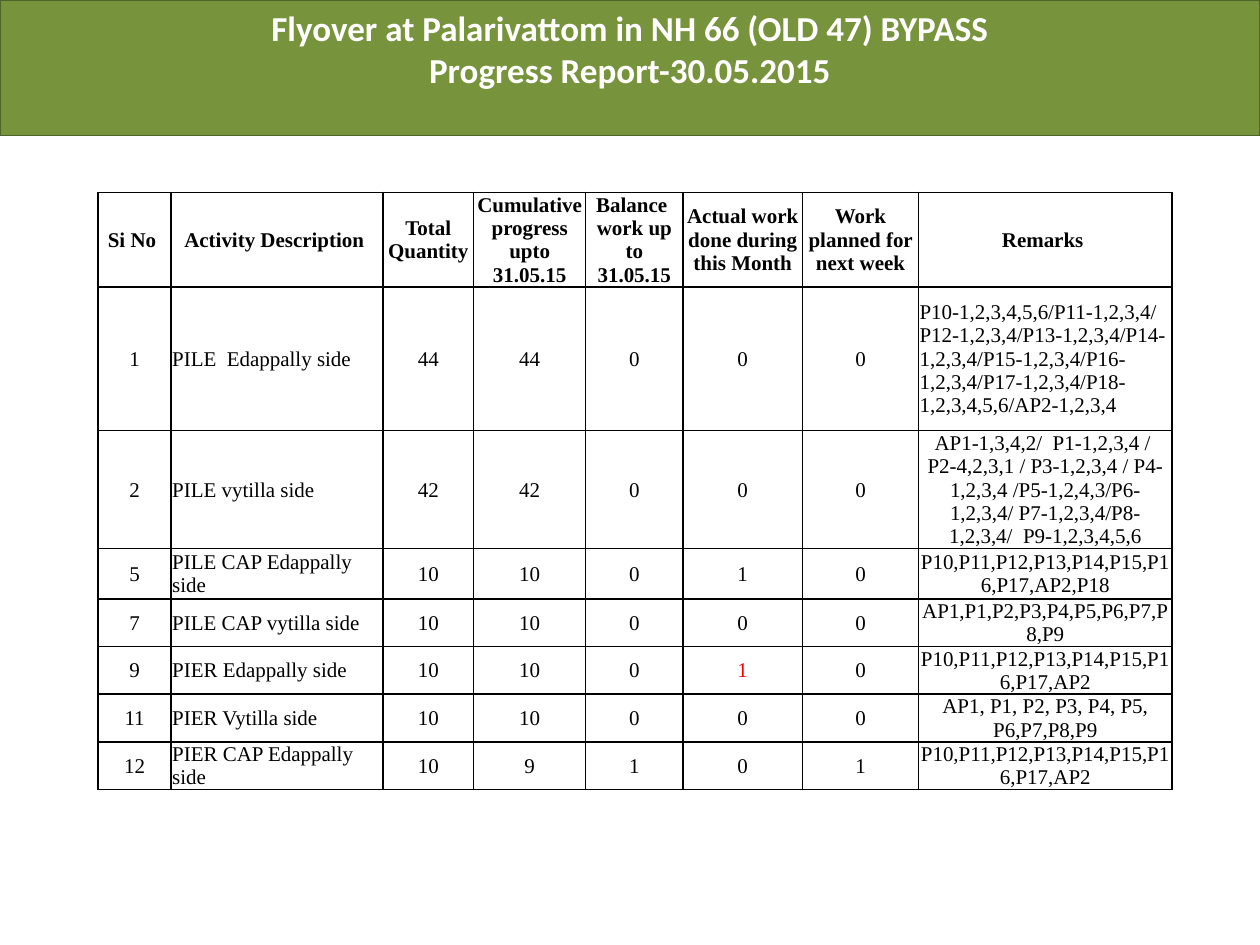
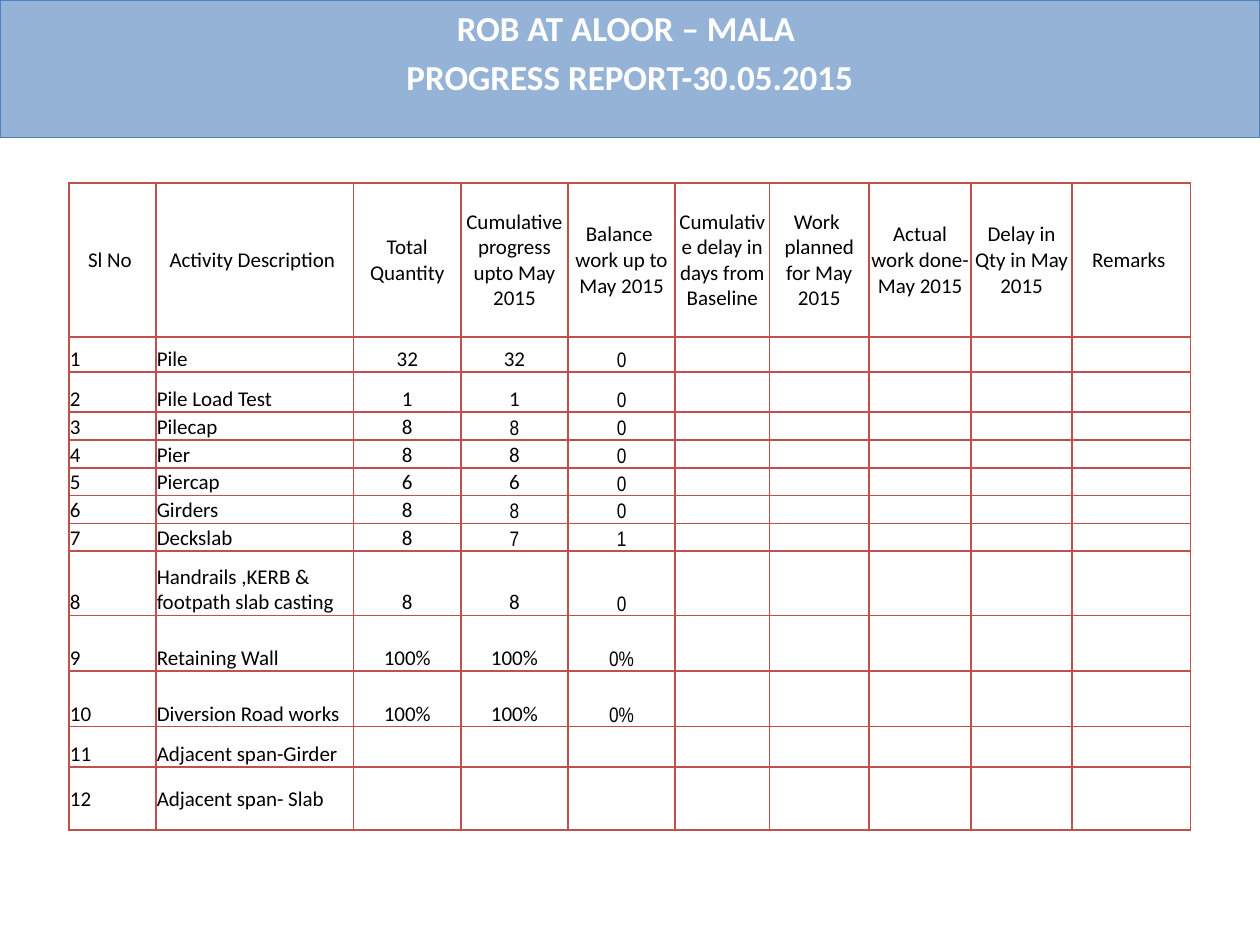
from lxml import etree
from pptx import Presentation
from pptx import util as u
from pptx.dml.color import RGBColor
from pptx.enum import shapes, text
from pptx.oxml.ns import qn

COLORS = {
    "white": "FFFFFF", "black": "000000", "red": "FF0000",
    "green": "77933C", "dark_green": "4F6228",
    "light_blue": "95B3D7", "blue": "4F81BD", "brick": "C0504D",
}
SLIDE_W, SLIDE_H = 25.4, 19.05
CELL_PAD = 0.02
ALIGN = {"left": text.PP_ALIGN.LEFT, "center": text.PP_ALIGN.CENTER}
ANCHOR = {
    "top": text.MSO_ANCHOR.TOP,
    "middle": text.MSO_ANCHOR.MIDDLE,
    "bottom": text.MSO_ANCHOR.BOTTOM,
}

FLYOVER_COLS = [1.47, 4.27, 1.83, 2.26, 1.96, 2.41, 2.34, 5.11]
FLYOVER_HEIGHTS = [1.75, 2.9, 2.26, 1.02, 0.79, 0.81, 0.86, 0.86]
FLYOVER_ROWS = [
    ["Si No ", "Activity Description ", "Total Quantity",
     "Cumulative progress upto 31.05.15", "Balance  work up to 31.05.15",
     "Actual work done during this Month", "Work planned for next week", "Remarks "],
    ["1", "PILE  Edappally side", "44", "44", "0", "0", "0",
     "P10-1,2,3,4,5,6/P11-1,2,3,4/P12-1,2,3,4/P13-1,2,3,4/P14-1,2,3,4/"
     "P15-1,2,3,4/P16-1,2,3,4/P17-1,2,3,4/P18-1,2,3,4,5,6/AP2-1,2,3,4"],
    ["2", "PILE vytilla side", "42", "42", "0", "0", "0",
     "AP1-1,3,4,2/  P1-1,2,3,4 /  P2-4,2,3,1 / P3-1,2,3,4 / P4-1,2,3,4 /"
     "P5-1,2,4,3/P6-1,2,3,4/ P7-1,2,3,4/P8-1,2,3,4/  P9-1,2,3,4,5,6"],
    ["5", "PILE CAP Edappally side", "10", "10", "0", "1", "0",
     "P10,P11,P12,P13,P14,P15,P16,P17,AP2,P18"],
    ["7", "PILE CAP vytilla side", "10", "10", "0", "0", "0",
     "AP1,P1,P2,P3,P4,P5,P6,P7,P8,P9"],
    ["9", "PIER Edappally side", "10", "10", "0", "1", "0",
     "P10,P11,P12,P13,P14,P15,P16,P17,AP2"],
    ["11", "PIER Vytilla side", "10", "10", "0", "0", "0",
     "AP1, P1, P2, P3, P4, P5, P6,P7,P8,P9"],
    ["12", "PIER CAP Edappally side", "10", "9", "1", "0", "1",
     "P10,P11,P12,P13,P14,P15,P16,P17,AP2"],
]

ROB_COLS = [1.75, 3.99, 2.16, 2.16, 2.16, 1.9, 2.01, 2.06, 2.03, 2.39]
ROB_HEIGHTS = [3.1, 0.71, 0.81] + [0.56] * 5 + [1.3, 1.12, 1.12, 0.81, 1.27]
ROB_ROWS = [
    ["Sl No ", "Activity Description ", "Total Quantity",
     "Cumulative progress upto May 2015", "Balance  work up to May 2015",
     "Cumulative delay in days from Baseline", "Work  planned for May 2015",
     "Actual work done- May 2015", "Delay in Qty in May 2015", "Remarks "],
    ["1", "Pile", "32", "32", "0"],
    ["2", "Pile Load Test", "1", "1", "0"],
    ["3", "Pilecap", "8", "8", "0"],
    ["4", "Pier", "8", "8", "0"],
    ["5", "Piercap", "6", "6", "0"],
    ["6", "Girders", "8", "8", "0"],
    ["7", "Deckslab", "8", "7", "1"],
    ["8", "Handrails ,KERB & footpath slab casting", "8", "8", "0"],
    ["9", "Retaining Wall", "100%", "100%", "0%"],
    ["10", "Diversion Road works", "100%", "100%", "0%"],
    ["11", "Adjacent span-Girder"],
    ["12", "Adjacent span- Slab"],
]


def rgb(name):
    return RGBColor.from_string(COLORS[name])


def write(p, content, font="Calibri", size=12, color="black", bold=False,
          align="center", before=0):
    p.alignment = ALIGN[align]
    p.space_before = u.Pt(before)
    if not content:
        etree.SubElement(p._p, qn("a:endParaRPr"), sz=str(size * 100))
        return
    r = p.add_run()
    r.text = content
    r.font.name, r.font.size, r.font.bold = font, u.Pt(size), bold
    r.font.color.rgb = rgb(color)


def title_band(s, box, lines, fill, line, gap):
    sp = s.shapes.add_shape(shapes.MSO_SHAPE.RECTANGLE, *map(u.Cm, box))
    sp.shadow.inherit = False
    sp.fill.solid()
    sp.fill.fore_color.rgb = rgb(fill)
    sp.line.color.rgb = rgb(line)
    sp.line.width = u.Pt(0.75)
    tf = sp.text_frame
    tf.word_wrap = True
    tf.vertical_anchor = ANCHOR["top"]
    for i, content in enumerate(lines):
        p = tf.add_paragraph() if i else tf.paragraphs[0]
        write(p, content, size=20, color="white", bold=True, before=gap if i else 0)


def border(cell, color):
    tc_pr = cell._tc.get_or_add_tcPr()
    for i, side in enumerate(("lnL", "lnR", "lnT", "lnB")):
        ln = etree.Element(qn(f"a:{side}"), w=str(u.Pt(1)))
        fill = etree.SubElement(ln, qn("a:solidFill"))
        etree.SubElement(fill, qn("a:srgbClr"), val=COLORS[color])
        tc_pr.insert(i, ln)


def progress_table(s, left, top, cols, heights, rows, line, style):
    frame = s.shapes.add_table(len(rows), len(cols), u.Cm(left), u.Cm(top),
                               u.Cm(sum(cols)), u.Cm(sum(heights)))
    table = frame.table
    table.first_row = table.horz_banding = False
    for column, width in zip(table.columns, cols):
        column.width = u.Cm(width)
    for i, (row, height) in enumerate(zip(table.rows, heights)):
        row.height = u.Cm(height)
        for j, cell in enumerate(row.cells):
            look = style(i, j)
            cell.margin_left = cell.margin_right = cell.margin_top = u.Cm(CELL_PAD)
            cell.margin_bottom = 0
            cell.vertical_anchor = ANCHOR[look.pop("anchor")]
            fill = look.pop("fill", None)
            if fill:
                cell.fill.solid()
                cell.fill.fore_color.rgb = rgb(fill)
            else:
                cell.fill.background()
            border(cell, line)
            content = rows[i][j] if j < len(rows[i]) else ""
            write(cell.text_frame.paragraphs[0], content, **look)


def flyover_style(i, j):
    header = i == 0
    left = not header and (j == 1 or (i, j) == (1, 7))
    return dict(font="Times New Roman", bold=header, anchor="middle",
                fill=None if header else "white",
                color="red" if (i, j) == (5, 5) else "black",
                align="left" if left else "center")


def rob_style(i, j):
    header, last = i == 0, i == len(ROB_ROWS) - 1
    narrow = not header and (j == 4 or (j == 3 and i in (3, 6, 7)))
    return dict(font="Arial Narrow" if narrow else "Calibri",
                anchor="middle" if header or last else "bottom",
                align="left" if j < 2 and not header else "center")


def flyover_slide(s):
    title_band(s, (0, 0, SLIDE_W, 2.74),
               ["Flyover at Palarivattom in NH 66 (OLD 47) BYPASS",
                "Progress Report-30.05.2015"], "green", "dark_green", 0)
    progress_table(s, 1.98, 3.88, FLYOVER_COLS, FLYOVER_HEIGHTS, FLYOVER_ROWS,
                   "black", flyover_style)


def rob_slide(s):
    title_band(s, (0, 0, SLIDE_W, 2.77),
               ["ROB AT ALOOR – MALA ", "PROGRESS REPORT-30.05.2015"],
               "light_blue", "blue", 4)
    progress_table(s, 1.39, 3.69, ROB_COLS, ROB_HEIGHTS, ROB_ROWS,
                   "brick", rob_style)


def main():
    prs = Presentation()
    prs.slide_width, prs.slide_height = u.Cm(SLIDE_W), u.Cm(SLIDE_H)
    for build in (flyover_slide, rob_slide):
        build(prs.slides.add_slide(prs.slide_layouts[6]))
    prs.save("out.pptx")


if __name__ == "__main__":
    main()
